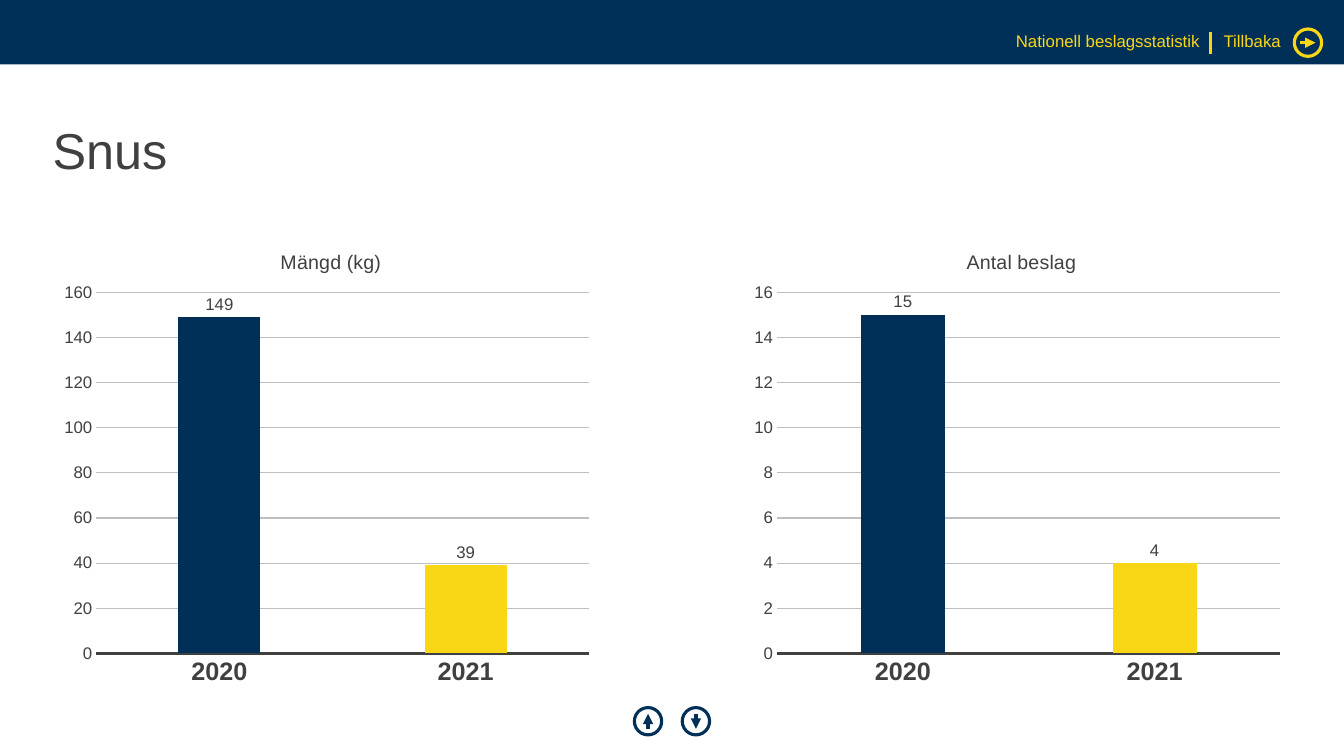
from lxml import etree
from pptx import Presentation
from pptx.chart.data import CategoryChartData
from pptx.dml.color import RGBColor
from pptx.enum.chart import XL_CHART_TYPE, XL_LABEL_POSITION, XL_TICK_MARK
from pptx.enum.shapes import MSO_CONNECTOR, MSO_SHAPE
from pptx.enum.text import MSO_ANCHOR, PP_ALIGN
from pptx.oxml.ns import qn
from pptx.util import Pt

COLUMN = XL_CHART_TYPE.COLUMN_CLUSTERED
OUTSIDE_END = XL_LABEL_POSITION.OUTSIDE_END
NO_TICK = XL_TICK_MARK.NONE
STRAIGHT = MSO_CONNECTOR.STRAIGHT
RECTANGLE = MSO_SHAPE.RECTANGLE
OVAL = MSO_SHAPE.OVAL
MIDDLE = MSO_ANCHOR.MIDDLE
TOP = MSO_ANCHOR.TOP
LEFT = PP_ALIGN.LEFT
RIGHT = PP_ALIGN.RIGHT

NAVY = RGBColor(0x00, 0x30, 0x57)
YELLOW = RGBColor(0xF9, 0xD6, 0x16)
CHARCOAL = RGBColor(0x40, 0x40, 0x40)
GRID_GREY = RGBColor(0xBF, 0xBF, 0xBF)
FONT = "Arial"
YEARS = ("2020", "2021")
YEAR_COLORS = (NAVY, YELLOW)


def style_font(font, size, color=CHARCOAL, bold=False):
    font.name = FONT
    font.size = Pt(size)
    font.bold = bold
    font.color.rgb = color


def write_text(shape, text, size=12, color=CHARCOAL, align=LEFT, anchor=TOP):
    frame = shape.text_frame
    frame.word_wrap = True
    frame.vertical_anchor = anchor
    frame.margin_left = frame.margin_right = 0
    frame.margin_top = frame.margin_bottom = 0
    paragraph = frame.paragraphs[0]
    paragraph.alignment = align
    paragraph.line_spacing = 0.9
    run = paragraph.add_run()
    run.text = text
    style_font(run.font, size, color)


def add_rule(slide, start, end, color, width, arrow=False):
    rule = slide.shapes.add_connector(STRAIGHT, *map(Pt, start + end))
    rule.line.color.rgb = color
    rule.line.width = Pt(width)
    if arrow:
        etree.SubElement(rule.line._get_or_add_ln(), qn("a:tailEnd"), type="triangle")
    etree.SubElement(rule.element.spPr, qn("a:effectLst"))


def add_arrow_button(slide, center_x, center_y, color, dx=0, dy=0):
    size, reach = 19.5, 5.4
    add_rule(slide, (center_x - dx * reach, center_y - dy * reach),
             (center_x + dx * reach, center_y + dy * reach), color, 2.5, arrow=True)
    ring = slide.shapes.add_shape(OVAL, Pt(center_x - size / 2), Pt(center_y - size / 2),
                                  Pt(size), Pt(size))
    ring.shadow.inherit = False
    ring.fill.background()
    ring.line.color.rgb = color
    ring.line.width = Pt(2.25)


def add_header(slide, left, top, width, height):
    band = slide.shapes.add_shape(RECTANGLE, Pt(left), Pt(top), Pt(width), Pt(height))
    band.shadow.inherit = False
    band.fill.solid()
    band.fill.fore_color.rgb = NAVY
    band.line.fill.background()
    right = left + width
    middle = top + 30.5
    for label, offset, label_width, align in (
            ("Nationell beslagsstatistik", 240, 137, RIGHT), ("Tillbaka", 86, 60, LEFT)):
        box = slide.shapes.add_textbox(Pt(right - offset), Pt(middle - 6.75),
                                       Pt(label_width), Pt(13.5))
        write_text(box, label, color=YELLOW, align=align)
    divider = right - 95.3
    add_rule(slide, (divider, middle - 7.8), (divider, middle + 8.2), YELLOW, 2.25)
    add_arrow_button(slide, right - 25.7, middle, YELLOW, dx=1)


def add_title(slide, left, top, width, height):
    title = slide.shapes.title
    title.left, title.top, title.width, title.height = map(Pt, (left, top, width, height))
    write_text(title, "Snus", size=36, anchor=MIDDLE)


def set_layout(parent, **fractions):
    layout = parent.find(qn("c:layout"))
    if layout is None:
        layout = etree.Element(qn("c:layout"))
        parent.insert(0, layout)
    manual = etree.SubElement(layout, qn("c:manualLayout"))
    if "w" in fractions:
        etree.SubElement(manual, qn("c:layoutTarget"), val="inner")
    for axis in "xy":
        etree.SubElement(manual, qn(f"c:{axis}Mode"), val="edge")
    for key, fraction in fractions.items():
        etree.SubElement(manual, qn(f"c:{key}"), val=str(fraction))


def add_year_chart(slide, left, top, width, height, heading, values, heading_x, plot_x, plot_w):
    data = CategoryChartData()
    data.categories = YEARS
    data.add_series("Series 1", values)
    chart = slide.shapes.add_chart(COLUMN, Pt(left), Pt(top), Pt(width), Pt(height), data).chart
    style_font(chart.font, 10)
    chart.has_legend = False
    chart.has_title = True
    heading_run = chart.chart_title.text_frame.paragraphs[0].add_run()
    heading_run.text = heading
    style_font(heading_run.font, 14)
    chart.chart_title.include_in_layout = False
    title_element = chart.chart_title.element
    set_layout(title_element, x=heading_x, y=0.04)
    plot_element = title_element.getparent().find(qn("c:plotArea"))
    set_layout(plot_element, x=plot_x, y=0.14, w=plot_w, h=0.77)

    years = chart.category_axis
    years.major_tick_mark = years.minor_tick_mark = NO_TICK
    years.format.line.color.rgb = CHARCOAL
    years.format.line.width = Pt(2.25)
    style_font(years.tick_labels.font, 18, bold=True)

    scale = chart.value_axis
    scale.minimum_scale = 0
    scale.major_tick_mark = scale.minor_tick_mark = NO_TICK
    scale.format.line.fill.background()
    scale.major_gridlines.format.line.color.rgb = GRID_GREY
    scale.major_gridlines.format.line.width = Pt(0.75)
    style_font(scale.tick_labels.font, 12)

    plot = chart.plots[0]
    plot.vary_by_categories = False
    plot.gap_width = 200
    plot.overlap = -27
    series = plot.series[0]
    series.format.fill.solid()
    series.format.fill.fore_color.rgb = NAVY
    for index, color in enumerate(YEAR_COLORS):
        column_fill = series.points[index].format.fill
        column_fill.solid()
        column_fill.fore_color.rgb = color
    labels = series.data_labels
    labels.show_value = True
    labels.position = OUTSIDE_END
    style_font(labels.font, 12)


def add_page_buttons(slide, center_x, center_y):
    for side in (-1, 1):
        add_arrow_button(slide, center_x + side * 17.1, center_y, NAVY, dy=side)


def main():
    deck = Presentation()
    deck.slide_width, deck.slide_height = Pt(960), Pt(540)
    slide = deck.slides.add_slide(deck.slide_layouts[5])
    add_header(slide, 0, 0, 960, 46)
    add_title(slide, 37.5, 57, 884, 104.5)
    add_year_chart(slide, 37.5, 162, 391, 335, "Mängd (kg)", (149, 39),
                   heading_x=0.41, plot_x=0.08, plot_w=0.9)
    add_year_chart(slide, 531.5, 162, 391, 335, "Antal beslag", (15, 4),
                   heading_x=0.4, plot_x=0.06, plot_w=0.92)
    add_page_buttons(slide, 480, 515.2)
    deck.save("out.pptx")


if __name__ == "__main__":
    main()
